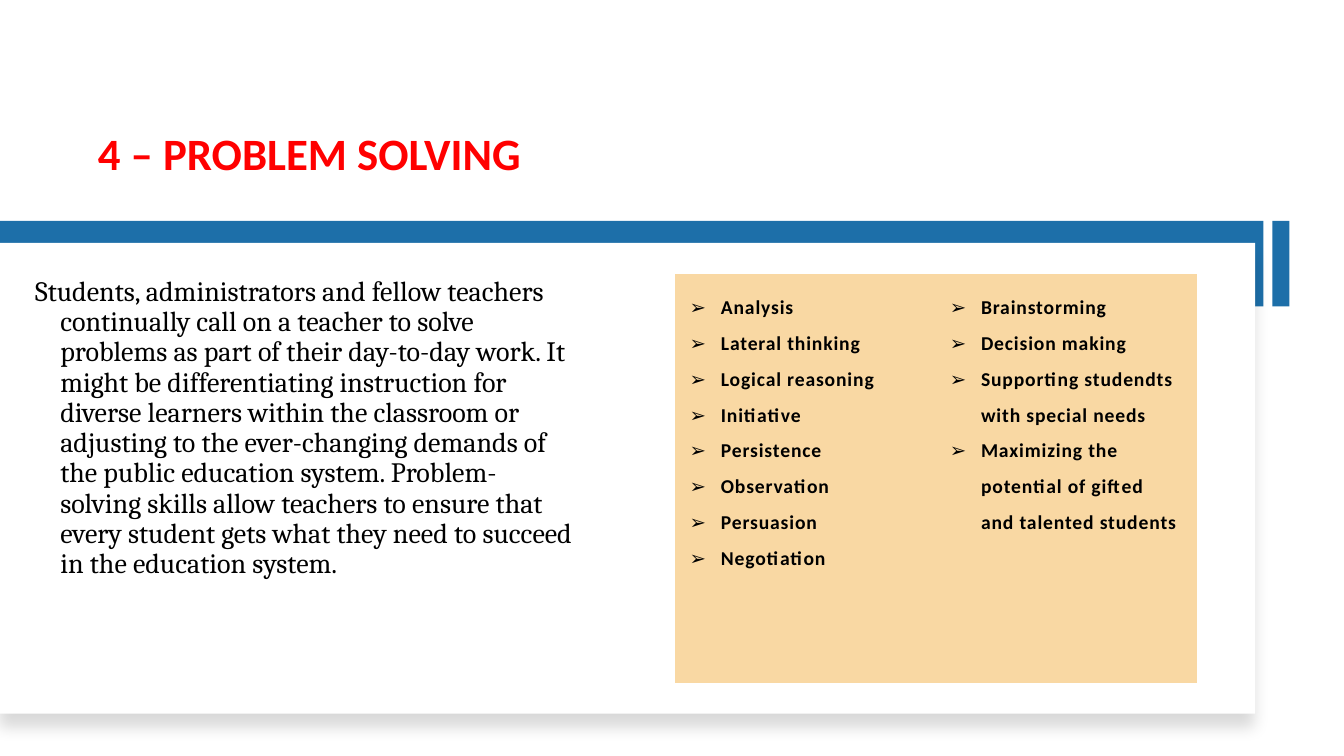
from lxml import etree
from pptx import Presentation
from pptx.dml.color import RGBColor
from pptx.enum.shapes import MSO_SHAPE
from pptx.enum.text import MSO_ANCHOR, PP_ALIGN
from pptx.oxml import parse_xml
from pptx.oxml.ns import nsdecls, qn
from pptx.util import Inches, Pt

RECT = MSO_SHAPE.RECTANGLE
TOP, BOTTOM = MSO_ANCHOR.TOP, MSO_ANCHOR.BOTTOM
LEFT = PP_ALIGN.LEFT
RED = RGBColor(0xFF, 0x00, 0x00)
BLACK = RGBColor(0x00, 0x00, 0x00)
WHITE = RGBColor(0xFF, 0xFF, 0xFF)
BLUE = RGBColor(0x1D, 0x6F, 0xA9)
SAND = RGBColor(0xF9, 0xD8, 0xA3)
PLAIN_TABLE = "{2D5ABB26-0587-4C30-8999-92F81FD0307C}"

HEADING = "4 – PROBLEM SOLVING"
EXPLANATION = (
    "Students, administrators and fellow teachers continually call on a teacher "
    "to solve problems as part of their day-to-day work. It might be "
    "differentiating instruction for diverse learners within the classroom or "
    "adjusting to the ever-changing demands of the public education system. "
    "Problem-solving skills allow teachers to ensure that every student gets "
    "what they need to succeed in the education system."
)
SKILL_COLUMNS = [
    {"width": 2.58, "space_before": 10, "skills": [
        "Analysis", "Lateral thinking", "Logical reasoning", "Initiative",
        "Persistence", "Observation", "Persuasion", "Negotiation"]},
    {"width": 2.6, "space_before": 27, "skills": [
        "Brainstorming", "Decision making",
        "Supporting studendts with special needs",
        "Maximizing the potential of gifted and talented students"]},
]
BAND_TOP, BAND_HEIGHT = 2.19, 0.85
PANELS = [
    ((0, BAND_TOP, 12.53, BAND_HEIGHT), BLUE),
    ((0, 2.41, 12.45, 4.67), WHITE),
    ((12.62, BAND_TOP, 0.17, BAND_HEIGHT), BLUE),
]
HEADING_FONT = {"name": "Calibri", "size": Pt(32), "bold": True}
EXPLANATION_FONT = {"name": "Cambria", "size": Pt(20), "bold": False}
SKILL_FONT = {"name": "Calibri", "size": Pt(14), "bold": True}
CELL_MARGINS = {"margin_left": Inches(0.15), "margin_right": Inches(0.15),
                "margin_top": Inches(0.1), "margin_bottom": Inches(0.1)}


def apply(target, values):
    for attribute, value in values.items():
        setattr(target, attribute, value)


def write(paragraph, text, font, color, spacing, hang=0):
    paragraph.alignment = LEFT
    paragraph.line_spacing = spacing
    run = paragraph.add_run()
    run.text = text
    apply(run.font, font)
    run.font.color.rgb = color
    properties = paragraph._p.get_or_add_pPr()
    properties.set("marL", str(Inches(hang)))
    properties.set("indent", str(-Inches(hang)))
    return run


def add_panel(slide, box, color):
    panel = slide.shapes.add_shape(RECT, *map(Inches, box))
    panel.shadow.inherit = False
    panel.fill.solid()
    panel.fill.fore_color.rgb = color
    panel.line.fill.background()
    return panel


def cast_shadow(panel):
    effects = panel._element.spPr.find(qn("a:effectLst"))
    effects.append(parse_xml(
        f'<a:outerShdw {nsdecls("a")} blurRad="{Pt(11)}" dist="{Pt(10)}" '
        'dir="5400000" algn="t" rotWithShape="0"><a:srgbClr val="000000">'
        '<a:alpha val="15000"/></a:srgbClr></a:outerShdw>'))


def add_bullet(paragraph, run):
    properties = paragraph._p.get_or_add_pPr()
    etree.SubElement(properties, qn("a:buFont")).set("typeface", "Arial")
    etree.SubElement(properties, qn("a:buChar")).set("char", "➢")
    run.font._element.set("spc", "60")


def add_skills(slide):
    width = sum(column["width"] for column in SKILL_COLUMNS)
    frame = slide.shapes.add_table(1, len(SKILL_COLUMNS), Inches(6.69),
                                   Inches(2.72), Inches(width), Inches(4.06))
    table = frame.table
    table.first_row = table.horz_banding = False
    table._tbl.tblPr.find(qn("a:tableStyleId")).text = PLAIN_TABLE
    for index, column in enumerate(SKILL_COLUMNS):
        table.columns[index].width = Inches(column["width"])
        cell = table.cell(0, index)
        apply(cell, CELL_MARGINS)
        cell.fill.solid()
        cell.fill.fore_color.rgb = SAND
        for row, skill in enumerate(column["skills"]):
            text = cell.text_frame
            paragraph = text.add_paragraph() if row else text.paragraphs[0]
            paragraph.space_before = Pt(0 if row else column["space_before"])
            run = write(paragraph, skill, SKILL_FONT, BLACK, 1.5, 0.31)
            add_bullet(paragraph, run)


def main():
    """Build the problem solving slide."""
    deck = Presentation()
    deck.slide_width, deck.slide_height = Inches(13.33), Inches(7.5)
    slide = deck.slides.add_slide(deck.slide_layouts[5])

    heading = slide.shapes.title
    apply(heading, {"left": Inches(0.87), "top": Inches(0.42),
                    "width": Inches(11.01), "height": Inches(1.42)})
    heading.text_frame.vertical_anchor = BOTTOM
    write(heading.text_frame.paragraphs[0], HEADING, HEADING_FONT, RED, 0.9)

    band, page, tab = [add_panel(slide, box, color) for box, color in PANELS]
    cast_shadow(page)

    explanation = slide.shapes.add_textbox(
        Inches(0.25), Inches(2.7), Inches(5.57), Inches(3.98)).text_frame
    apply(explanation, {"word_wrap": True, "vertical_anchor": TOP})
    write(explanation.paragraphs[0], EXPLANATION, EXPLANATION_FONT, BLACK, 0.9, 0.25)

    add_skills(slide)
    deck.save("out.pptx")


if __name__ == "__main__":
    main()
